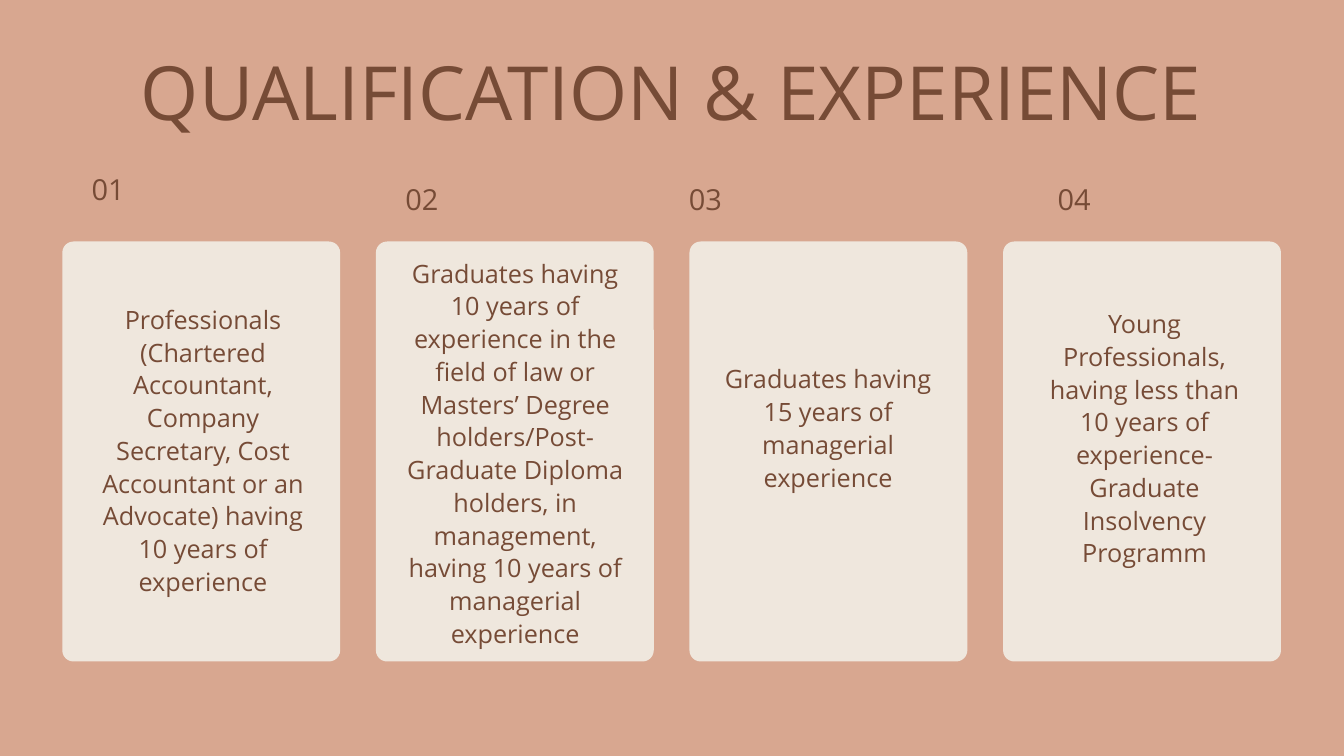
from typing import NamedTuple

from pptx import Presentation
from pptx.dml.color import RGBColor
from pptx.enum.shapes import MSO_SHAPE as Shape
from pptx.enum.text import PP_ALIGN as Align
from pptx.util import Emu, Pt

PX = 9525  # EMU per px, 96 px to the inch
WIDTH, HEIGHT = 1920, 1080
BACKGROUND, CREAM, BROWN = "D8A790", "EFE7DD", "764B36"
FONT = "Open Sans"

MARGIN, CARD_TOP, CARD_W, CARD_H, RADIUS = 89, 345, 397, 600, 16


class Box(NamedTuple):
    left: int
    top: int
    width: int
    height: int


class Style(NamedTuple):
    size: int
    line_pt: float
    align: Align


class Card(NamedTuple):
    number: str
    number_box: Box
    text: str
    text_box: Box


TITLE = Style(80, 96, Align.CENTER)
NUMBER = Style(31, 48.7, Align.LEFT)
BODY = Style(27, 35.1, Align.CENTER)

CARDS = [
    Card("01", Box(131, 230, 85, 57),
         "Professionals (Chartered Accountant, Company Secretary, Cost "
         "Accountant or an Advocate) having 10 years of experience",
         Box(131, 431, 318, 415)),
    Card("02", Box(579, 244, 85, 57),
         "Graduates having 10 years of experience in the field of law or "
         "Masters’ Degree holders/Post-Graduate Diploma holders, in "
         "management, having 10 years of managerial experience",
         Box(577, 365, 318, 552)),
    Card("03", Box(984, 244, 85, 57),
         "Graduates having 15 years of managerial experience",
         Box(1024, 516, 318, 184)),
    Card("04", Box(1511, 244, 85, 57),
         "Young Professionals, having less than 10 years of experience- "
         "Graduate Insolvency Programm",
         Box(1476, 437, 318, 369)),
]


def px(n: int) -> Emu:
    return Emu(n * PX)


def paint(fill, color: str) -> None:
    fill.solid()
    fill.fore_color.rgb = RGBColor.from_string(color)


def add_panel(s, box: Box) -> None:
    sp = s.shapes.add_shape(Shape.ROUNDED_RECTANGLE, *map(px, box))
    sp.adjustments[0] = RADIUS / box.width
    sp.shadow.inherit = False
    sp.line.fill.background()
    paint(sp.fill, CREAM)


def add_text(s, box: Box, text: str, style: Style) -> None:
    tf = s.shapes.add_textbox(*map(px, box)).text_frame
    tf.word_wrap = True
    tf.margin_left = tf.margin_top = tf.margin_right = tf.margin_bottom = 0
    p = tf.paragraphs[0]
    p.text = text
    p.alignment = style.align
    p.line_spacing = Pt(style.line_pt)
    p.font.name = FONT
    p.font.size = Pt(style.size)
    paint(p.font.fill, BROWN)


def main() -> None:
    prs = Presentation()
    prs.slide_width, prs.slide_height = px(WIDTH), px(HEIGHT)
    s = prs.slides.add_slide(prs.slide_layouts[6])
    paint(s.background.fill, BACKGROUND)

    add_text(s, Box(0, 66, WIDTH, 128), "QUALIFICATION & EXPERIENCE", TITLE)
    pitch = (WIDTH - 2 * MARGIN - CARD_W) // (len(CARDS) - 1)
    for i, card in enumerate(CARDS):
        add_panel(s, Box(MARGIN + i * pitch, CARD_TOP, CARD_W, CARD_H))
        add_text(s, card.number_box, card.number, NUMBER)
        add_text(s, card.text_box, card.text, BODY)

    prs.save("out.pptx")


if __name__ == "__main__":
    main()
